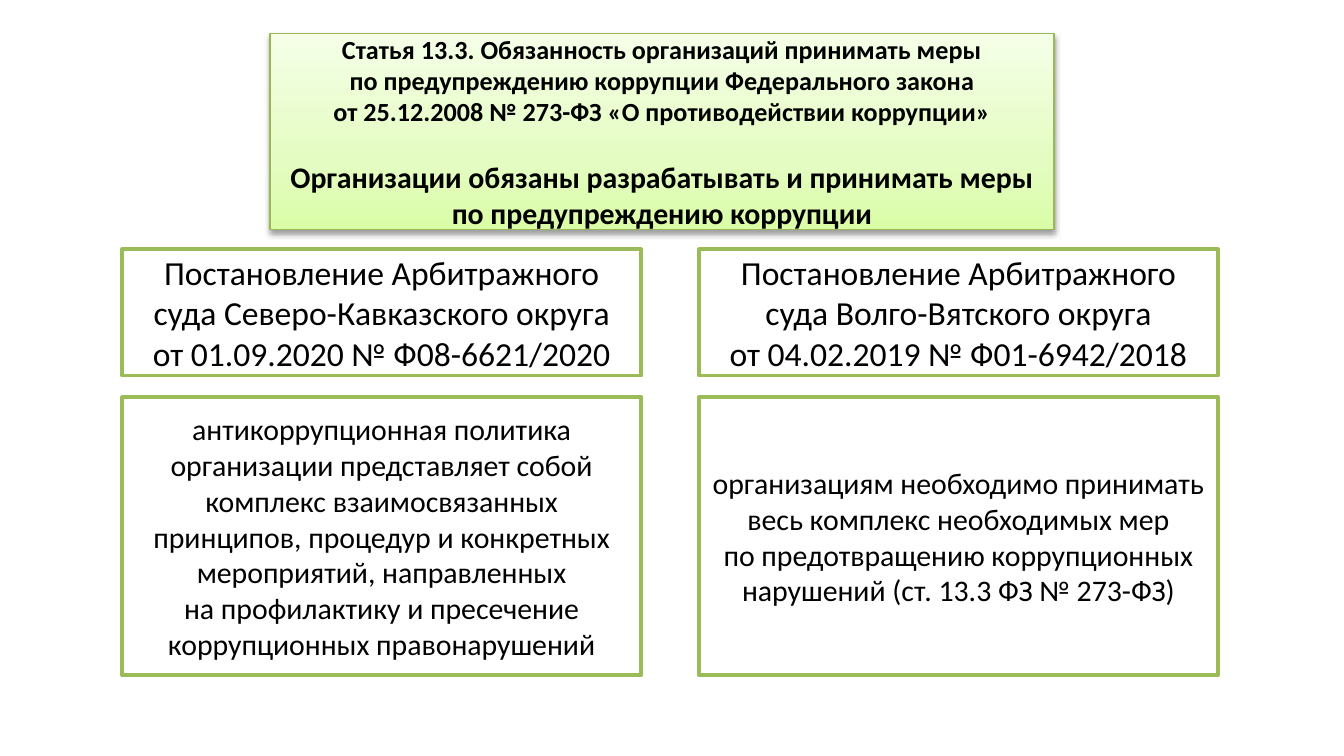
from copy import deepcopy
from dataclasses import dataclass

from lxml.etree import SubElement
from pptx import Presentation
from pptx.dml.color import RGBColor
from pptx.enum.shapes import MSO_SHAPE
from pptx.enum.text import MSO_ANCHOR, MSO_AUTO_SIZE, PP_ALIGN
from pptx.oxml.ns import qn
from pptx.shapes.base import BaseShape
from pptx.slide import Slide
from pptx.util import Pt


@dataclass(frozen=True)
class Theme:
    font: str = "Calibri"
    text: RGBColor = RGBColor(0, 0, 0)
    paper: RGBColor = RGBColor(255, 255, 255)
    border: RGBColor = RGBColor.from_string("9BBB59")
    header_border: RGBColor = RGBColor.from_string("98B955")
    header_stops: tuple = ((0, "DAFDA7"), (0.35, "E4FCC2"), (1, "F5FFE7"))
    law_size: int = 14
    body_size: int = 16
    ruling_size: int = 18


@dataclass(frozen=True)
class Case:
    ruling: str
    finding: str


THEME = Theme()
COLUMN_LEFTS = (65.5, 374.5)
COLUMN_WIDTH = 278
RULING_TOP, RULING_HEIGHT = 133.6, 67.7
FINDING_TOP, FINDING_HEIGHT = 212.8, 149

LAW = ("Статья 13.3. Обязанность организаций принимать меры\v"
       "по предупреждению коррупции Федерального закона\v"
       "от 25.12.2008 № 273-ФЗ «О противодействии коррупции»")
DUTY = "Организации обязаны разрабатывать и принимать меры\vпо предупреждению коррупции"
CASES = (
    Case("Постановление Арбитражного суда Северо-Кавказского округа "
         "от 01.09.2020 № Ф08-6621/2020",
         "антикоррупционная политика организации представляет собой комплекс "
         "взаимосвязанных принципов, процедур и конкретных мероприятий, направленных\v"
         "на профилактику и пресечение коррупционных правонарушений"),
    Case("Постановление Арбитражного суда Волго-Вятского округа\v"
         "от 04.02.2019 № Ф01-6942/2018",
         "организациям необходимо принимать весь комплекс необходимых мер\v"
         "по предотвращению коррупционных нарушений (ст. 13.3 ФЗ № 273-ФЗ)"),
)


def write_text(box: BaseShape, text: str, sizes: tuple[int, ...], bold: bool = False) -> None:
    """Fill the box with centred text, one type size per paragraph."""
    frame = box.text_frame
    frame.text = text
    frame.word_wrap = True
    frame.auto_size = MSO_AUTO_SIZE.NONE
    frame.vertical_anchor = MSO_ANCHOR.MIDDLE
    for para, size in zip(frame.paragraphs, sizes):
        para.alignment = PP_ALIGN.CENTER
        for span in para.runs:
            span.font.name = THEME.font
            span.font.size = Pt(size)
            span.font.bold = bold
            span.font.color.rgb = THEME.text
        # Line breaks need the run format too, or they set the line height.
        run_format = para.runs[0].font._element
        for line_break in para._p.findall(qn("a:br")):
            line_break.append(deepcopy(run_format))


def fill_header(box: BaseShape) -> None:
    """Apply the three-stop gradient, running from bottom to top."""
    box.fill.gradient()
    box.fill.gradient_angle = 90
    stop_list = box.element.spPr.find(qn("a:gradFill")).find(qn("a:gsLst"))
    stop_list.insert(1, deepcopy(stop_list[0]))
    for stop, (position, color) in zip(box.fill.gradient_stops, THEME.header_stops):
        stop.position = position
        stop.color.rgb = RGBColor.from_string(color)


def add_soft_shadow(box: BaseShape) -> None:
    box.shadow.inherit = False
    effects = box.element.spPr.find(qn("a:effectLst"))
    shadow = SubElement(effects, qn("a:outerShdw"), blurRad=str(Pt(3.1)),
                        dist=str(Pt(1.6)), dir="5400000", rotWithShape="0")
    color = SubElement(shadow, qn("a:srgbClr"), val="000000")
    SubElement(color, qn("a:alpha"), val="38000")


def format_header(box: BaseShape) -> None:
    box.left, box.top, box.width, box.height = Pt(144.7), Pt(18), Pt(420), Pt(105.1)
    fill_header(box)
    box.line.color.rgb = THEME.header_border
    box.line.width = Pt(0.75)
    add_soft_shadow(box)
    write_text(box, f"{LAW}\n{DUTY}", (THEME.law_size, THEME.body_size), bold=True)
    law, duty = box.text_frame.paragraphs
    law.space_before = Pt(0)
    duty.space_before = Pt(17)


def add_panel(page: Slide, left: float, top: float, height: float, text: str, size: int) -> None:
    box = page.shapes.add_shape(MSO_SHAPE.RECTANGLE, Pt(left), Pt(top),
                                Pt(COLUMN_WIDTH), Pt(height))
    box.shadow.inherit = False
    box.fill.solid()
    box.fill.fore_color.rgb = THEME.paper
    box.line.color.rgb = THEME.border
    box.line.width = Pt(2)
    write_text(box, text, (size,))


def main() -> None:
    deck = Presentation()
    deck.slide_width, deck.slide_height = Pt(720), Pt(405)
    page = deck.slides.add_slide(deck.slide_layouts.get_by_name("Title Only"))
    format_header(page.shapes.title)
    for left, case in zip(COLUMN_LEFTS, CASES):
        add_panel(page, left, RULING_TOP, RULING_HEIGHT, case.ruling, THEME.ruling_size)
        add_panel(page, left, FINDING_TOP, FINDING_HEIGHT, case.finding, THEME.body_size)
    deck.save("out.pptx")


if __name__ == "__main__":
    main()
